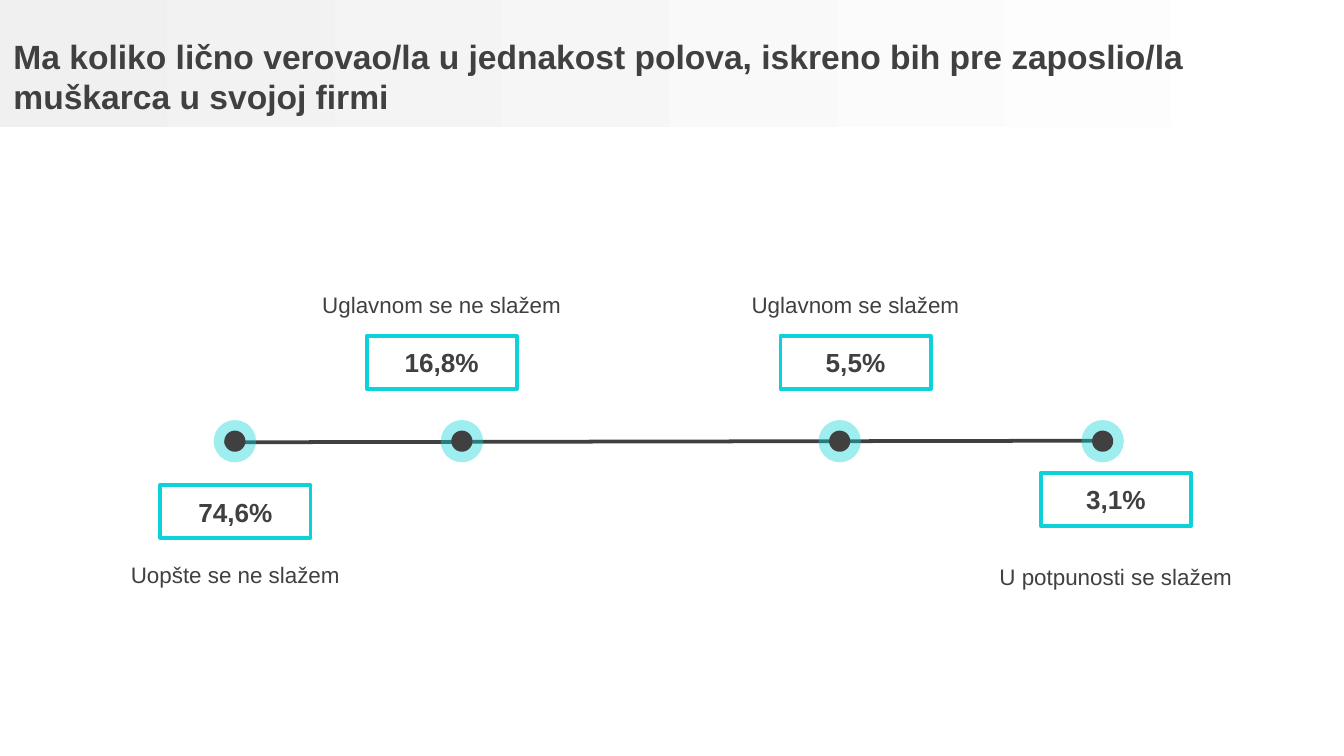
"""Build a slide with an agreement scale of four answers and their shares."""
from pptx import Presentation
from pptx.dml.color import RGBColor
from pptx.enum.shapes import MSO_CONNECTOR, MSO_SHAPE
from pptx.enum.text import MSO_ANCHOR, MSO_AUTO_SIZE, PP_ALIGN
from pptx.oxml.ns import qn
from pptx.util import Cm, Pt
from lxml import etree

RECT, OVAL = MSO_SHAPE.RECTANGLE, MSO_SHAPE.OVAL
STRAIGHT = MSO_CONNECTOR.STRAIGHT
TOP, MIDDLE = MSO_ANCHOR.TOP, MSO_ANCHOR.MIDDLE
LEFT, CENTER = PP_ALIGN.LEFT, PP_ALIGN.CENTER
NO_FIT = MSO_AUTO_SIZE.NONE

THEME = {
    "dark": RGBColor(0x40, 0x40, 0x40),
    "accent": RGBColor(0x0D, 0xD2, 0xD9),
    "band": (RGBColor(0xF0, 0xF0, 0xF0), RGBColor(0xFF, 0xFF, 0xFF)),
    "line": Pt(2),
    "title": {"name": "Arial", "size": Pt(18), "bold": True},
    "value": {"name": "Arial", "size": Pt(14), "bold": True},
    "label": {"name": "Arial", "size": Pt(12), "bold": False},
}


def add_shape(shapes, kind, x, y, w, h, color=None):
    s = shapes.add_shape(kind, Cm(x), Cm(y), Cm(w), Cm(h))
    s.shadow.inherit = False
    s.line.fill.background()
    if color is None:
        s.fill.background()
    else:
        s.fill.solid()
        s.fill.fore_color.rgb = color
    return s


def set_text(s, text, style, align, anchor):
    tf = s.text_frame
    frame = {"word_wrap": True, "auto_size": NO_FIT, "vertical_anchor": anchor}
    for key, value in frame.items():
        setattr(tf, key, value)
    p = tf.paragraphs[0]
    p.alignment = align
    r = p.add_run()
    r.text = text
    for key, value in THEME[style].items():
        setattr(r.font, key, value)
    r.font.color.rgb = THEME["dark"]


prs = Presentation()
prs.slide_width, prs.slide_height = Cm(25.4), Cm(14.29)
slide = prs.slides.add_slide(prs.slide_layouts[5])
shapes = slide.shapes

band = add_shape(shapes, RECT, 0, 0, 25.3, 2.4)
band.fill.gradient()
band.fill.gradient_angle = 0
for stop, color in zip(band.fill.gradient_stops, THEME["band"]):
    stop.color.rgb = color

title = shapes.title
band._element.addnext(title._element)
box = {"left": Cm(0), "top": Cm(0.08), "width": Cm(22.8), "height": Cm(2.72)}
for key, value in box.items():
    setattr(title, key, value)
set_text(
    title,
    "Ma koliko lično verovao/la u jednakost polova, "
    "iskreno bih pre zaposlio/la muškarca u svojoj firmi",
    "title", LEFT, MIDDLE)

axis = shapes.add_connector(STRAIGHT, Cm(4.24), Cm(8.36), Cm(21.03), Cm(8.33))
axis.line.color.rgb = THEME["dark"]
axis.line.width = THEME["line"]
etree.SubElement(axis._element.spPr, qn("a:effectLst"))

AXIS_Y = 8.34
HALO, DOT = 0.8, 0.4
BOX_W, BOX_H = 2.84, 1.0
LABEL_W, LABEL_H = 5.72, 0.77

answers = [
    ("Uopšte se ne slažem", "74,6%", 4.44, 4.45, 9.17, 10.49),
    ("Uglavnom se ne slažem", "16,8%", 8.73, 8.35, 6.35, 5.38),
    ("Uglavnom se slažem", "5,5%", 15.87, 16.17, 6.35, 5.38),
    ("U potpunosti se slažem", "3,1%", 20.84, 21.09, 8.94, 10.52),
]

for label, value, dot_x, text_x, box_y, label_y in answers:
    marker = shapes.add_group_shape()
    for size, color in ((HALO, THEME["accent"]), (DOT, THEME["dark"])):
        s = add_shape(marker.shapes, OVAL, dot_x - size / 2, AXIS_Y - size / 2,
                      size, size, color)
        if size == HALO:
            clr = s._element.spPr.find(qn("a:solidFill")).find(qn("a:srgbClr"))
            etree.SubElement(clr, qn("a:alpha")).set("val", "40000")

    s = add_shape(shapes, RECT, text_x - BOX_W / 2, box_y, BOX_W, BOX_H)
    s.line.color.rgb = THEME["accent"]
    s.line.width = THEME["line"]
    set_text(s, value, "value", CENTER, MIDDLE)

    s = shapes.add_textbox(Cm(text_x - LABEL_W / 2), Cm(label_y),
                           Cm(LABEL_W), Cm(LABEL_H))
    set_text(s, label, "label", CENTER, TOP)

prs.save("out.pptx")
